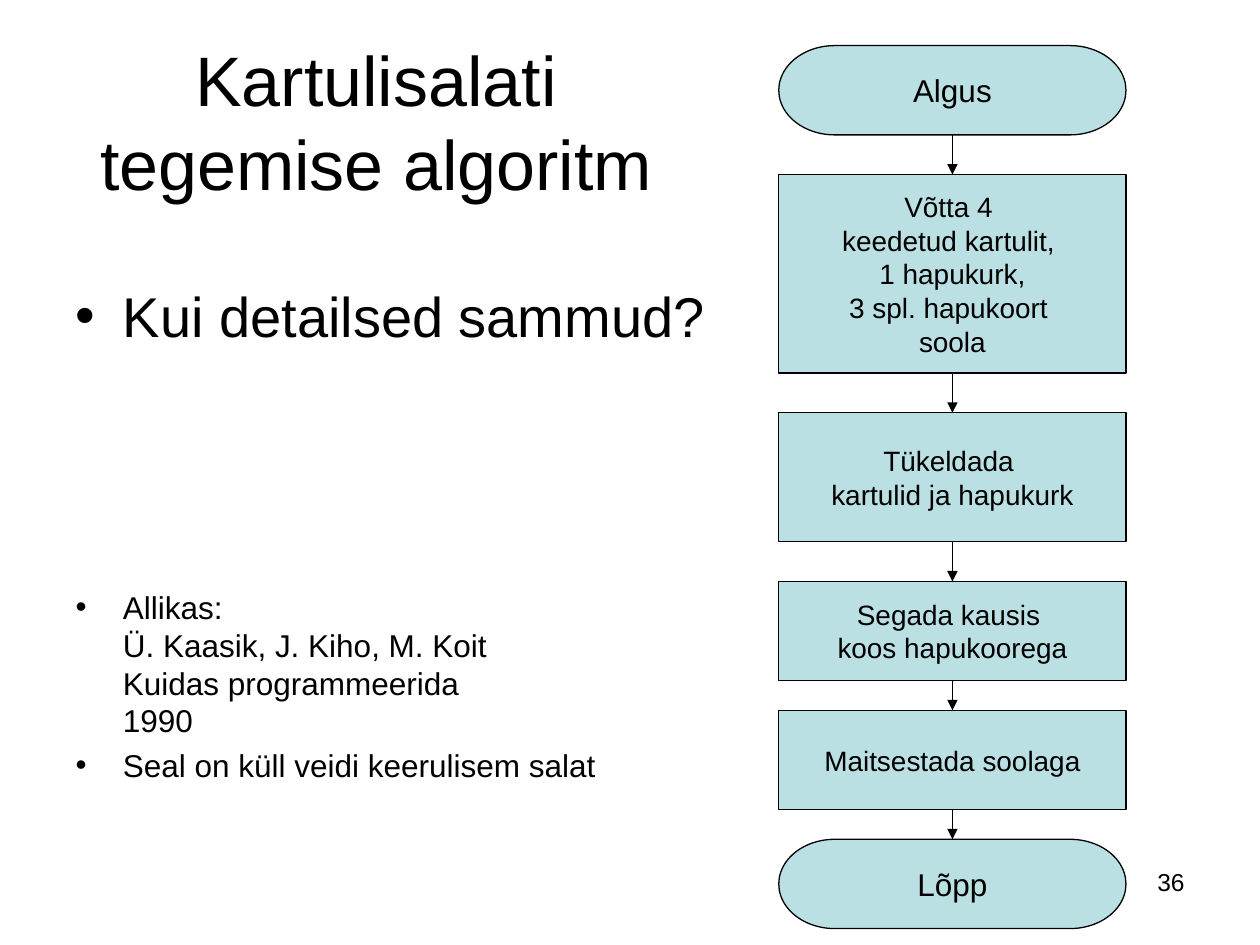
from lxml.etree import SubElement
from pptx import Presentation
from pptx.dml.color import RGBColor
from pptx.enum.shapes import MSO_CONNECTOR, MSO_SHAPE
from pptx.enum.text import MSO_ANCHOR, MSO_AUTO_SIZE, PP_ALIGN
from pptx.oxml.ns import qn
from pptx.util import Cm, Pt

BLACK = RGBColor(0x00, 0x00, 0x00)
PALE_TEAL = RGBColor(0xBB, 0xE0, 0xE3)
FONT = "Arial"

# Content
TITLE = "Kartulisalati tegemise algoritm"
SLIDE_NUMBER = "36"
BULLETS = [  # lines, size, space before (points)
    (["Kui detailsed sammud?"], 32, 0),
    (["Allikas:", "Ü. Kaasik, J. Kiho, M. Koit ", "Kuidas programmeerida ", "1990"], 18, 137),
    (["Seal on küll veidi keerulisem salat"], 18, 3.6),
]
TERMINATOR = MSO_SHAPE.FLOWCHART_TERMINATOR
PROCESS = MSO_SHAPE.FLOWCHART_PROCESS
STEPS = [  # kind, lines, size, height and gap below (cm)
    (TERMINATOR, ["Algus"], 18, 1.8, 0.8),
    (PROCESS, ["Võtta 4 ", "keedetud kartulit, ", "1 hapukurk,",
               "3 spl. hapukoort ", "soola"], 16, 4, 0.8),
    (PROCESS, ["Tükeldada ", "kartulid ja hapukurk"], 16, 2.6, 0.8),
    (PROCESS, ["Segada kausis ", "koos hapukoorega"], 16, 2, 0.6),
    (PROCESS, ["Maitsestada soolaga"], 16, 2, 0.6),
    (TERMINATOR, ["Lõpp"], 18, 1.8, 0),
]
FLOW_LEFT, FLOW_TOP, FLOW_WIDTH = 15.7, 0.92, 7


def place(shape, left, top, width, height):
    shape.left, shape.top = Cm(left), Cm(top)
    shape.width, shape.height = Cm(width), Cm(height)


def add_run(paragraph, text, size):
    run = paragraph.add_run()
    run.text = text
    run.font.name = FONT
    run.font.size = Pt(size)
    run.font.color.rgb = BLACK


def paragraphs_for(frame, items):
    """Yield each item with its own paragraph, starting with the existing one."""
    for index, item in enumerate(items):
        yield (frame.add_paragraph() if index else frame.paragraphs[0]), item


def add_step(slide, kind, lines, size, top, height):
    shape = slide.shapes.add_shape(
        kind, Cm(FLOW_LEFT), Cm(top), Cm(FLOW_WIDTH), Cm(height))
    shape.shadow.inherit = False
    shape.fill.solid()
    shape.fill.fore_color.rgb = PALE_TEAL
    shape.line.color.rgb = BLACK
    shape.line.width = Pt(0.75)
    frame = shape.text_frame
    frame.word_wrap = False
    frame.vertical_anchor = MSO_ANCHOR.MIDDLE
    for paragraph, line in paragraphs_for(frame, lines):
        paragraph.alignment = PP_ALIGN.CENTER
        add_run(paragraph, line, size)


def add_arrow(slide, top, bottom):
    center = Cm(FLOW_LEFT + FLOW_WIDTH / 2)
    arrow = slide.shapes.add_connector(
        MSO_CONNECTOR.STRAIGHT, center, Cm(top), center, Cm(bottom))
    arrow.line.color.rgb = BLACK
    arrow.line.width = Pt(0.75)
    SubElement(arrow.line._get_or_add_ln(), qn("a:tailEnd"), type="triangle")
    SubElement(arrow._element.spPr, qn("a:effectLst"))


def main():
    presentation = Presentation()
    presentation.slide_width, presentation.slide_height = Cm(25.4), Cm(19.05)
    slide = presentation.slides.add_slide(presentation.slide_layouts[1])

    # Title
    title = slide.shapes.title
    place(title, 1.27, 0.76, 12.62, 3.35)
    title.text_frame.auto_size = MSO_AUTO_SIZE.NONE
    title.text_frame.vertical_anchor = MSO_ANCHOR.MIDDLE
    heading = title.text_frame.paragraphs[0]
    heading.alignment = PP_ALIGN.CENTER
    add_run(heading, TITLE, 40)

    # Bullets
    body = slide.placeholders[1]
    place(body, 1.27, 5.54, 22.86, 11.48)
    body.text_frame.auto_size = MSO_AUTO_SIZE.NONE
    for paragraph, (lines, size, space) in paragraphs_for(body.text_frame, BULLETS):
        paragraph.space_before = Pt(space)
        for index, line in enumerate(lines):
            if index:
                paragraph.add_line_break()
            add_run(paragraph, line, size)

    # Flowchart
    top = FLOW_TOP
    for kind, lines, size, height, gap in STEPS:
        add_step(slide, kind, lines, size, top, height)
        bottom = top + height
        top = bottom + gap
        if gap:
            add_arrow(slide, bottom, top)

    # Slide number
    number = slide.shapes.add_textbox(Cm(18.2), Cm(17.35), Cm(5.93), Cm(1.32))
    number.text_frame.word_wrap = True
    paragraph = number.text_frame.paragraphs[0]
    paragraph.alignment = PP_ALIGN.RIGHT
    add_run(paragraph, SLIDE_NUMBER, 14)

    presentation.save("out.pptx")


if __name__ == "__main__":
    main()
